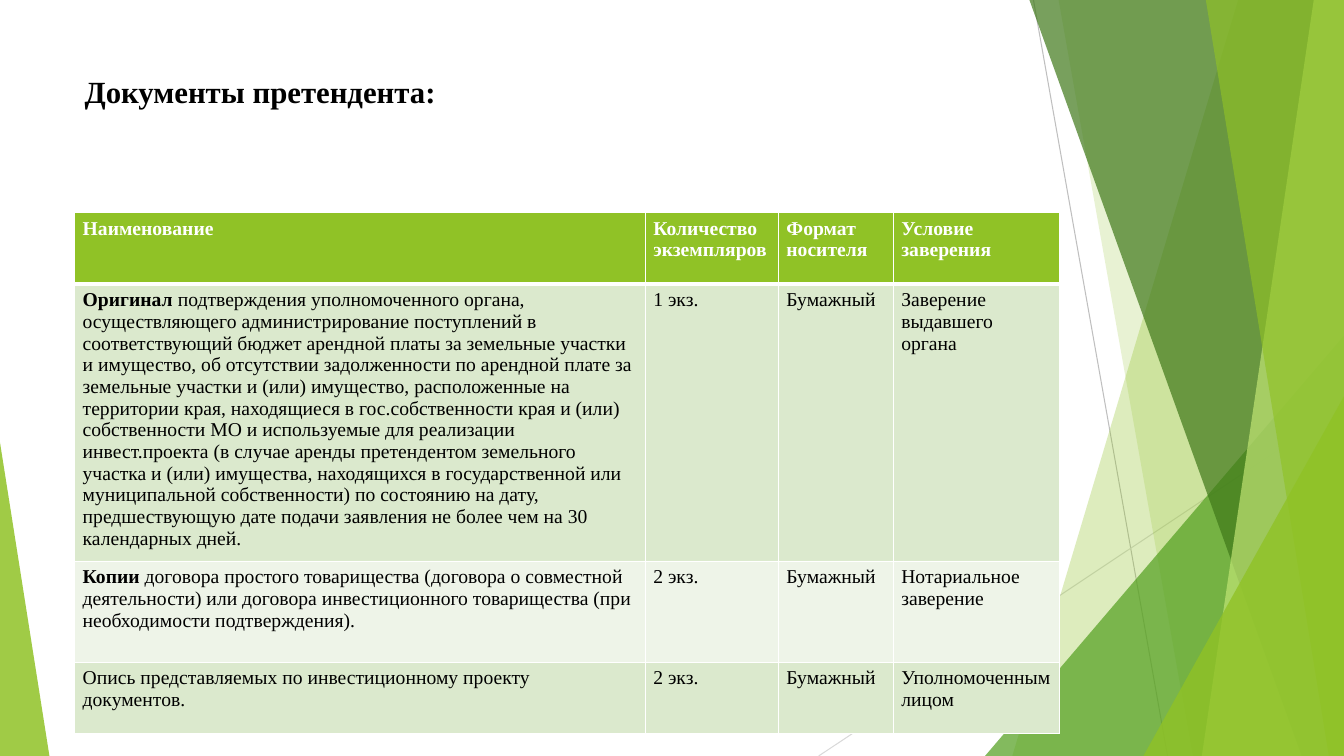
from lxml import etree
from pptx import Presentation
from pptx import util as u
from pptx.dml.color import RGBColor
from pptx.enum import shapes, text
from pptx.oxml import ns

WHITE = RGBColor(0xFF, 0xFF, 0xFF)
BLACK = RGBColor(0, 0, 0)
LIME = RGBColor(0x90, 0xC2, 0x26)
PALE_LIME = RGBColor(0xC0, 0xE4, 0x74)
GREEN = RGBColor(0x54, 0xA0, 0x21)
DARK_GREEN = RGBColor(0x3F, 0x78, 0x19)
GREY = RGBColor(0xBF, 0xBF, 0xBF)
LIGHT_GREY = RGBColor(0xD9, 0xD9, 0xD9)
BAND_DARK = RGBColor(0xDB, 0xE9, 0xCD)
BAND_LIGHT = RGBColor(0xEE, 0xF4, 0xE8)
FONT = "Times New Roman"
WIDTH, HEIGHT = 13.33, 7.5

COLUMNS = [5.66, 1.32, 1.14, 1.65]
ROWS = [0.71, 2.75, 1, 0.71]
HEADER = ["Наименование", "Количество экземпляров", "Формат носителя", "Условие заверения"]
# Each row: bold lead, rest of the name, copies, medium, certification
DOCUMENTS = [
    ("Оригинал",
     " подтверждения уполномоченного органа, осуществляющего администрирование "
     "поступлений в соответствующий бюджет арендной платы за земельные участки и "
     "имущество, об отсутствии задолженности по арендной плате за земельные участки "
     "и (или) имущество, расположенные на территории края, находящиеся в "
     "гос.собственности края и (или) собственности МО и используемые для реализации "
     "инвест.проекта (в случае аренды претендентом земельного участка и (или) "
     "имущества, находящихся в государственной или муниципальной собственности) по "
     "состоянию на дату, предшествующую дате подачи заявления не более чем на 30 "
     "календарных дней.",
     "1 экз.", "Бумажный", "Заверение выдавшего органа"),
    ("Копии ",
     "договора простого товарищества (договора о совместной деятельности) или договора "
     "инвестиционного товарищества (при необходимости подтверждения).",
     "2 экз.", "Бумажный", "Нотариальное заверение"),
    ("", "Опись представляемых по инвестиционному проекту документов.",
     "2 экз.", "Бумажный", "Уполномоченным лицом"),
]


def add_span(para, words, size, color, bold):
    span = para.add_run()
    span.text = words
    span.font.name = FONT
    span.font.size = u.Pt(size)
    span.font.bold = bold
    span.font.color.rgb = color


def paint(shape, color, opacity):
    shape.shadow.inherit = False
    shape.fill.solid()
    shape.fill.fore_color.rgb = color
    shape.line.fill.background()
    tone = shape.fill._xPr.find(".//" + ns.qn("a:srgbClr"))
    etree.SubElement(tone, ns.qn("a:alpha")).set("val", str(opacity * 1000))


def add_thin_line(page, start, end, color):
    line = page.shapes.add_connector(
        shapes.MSO_CONNECTOR.STRAIGHT, *map(u.Inches, start + end))
    line.line.color.rgb = color
    line.line.width = u.Pt(0.75)
    etree.SubElement(line._element.spPr, ns.qn("a:effectLst"))


def add_band(page, top_x, bottom_x, color, opacity):
    """Full-height panel with a slanted left edge, up to the right slide edge."""
    outline = page.shapes.build_freeform(u.Inches(top_x), 0)
    corners = [(WIDTH, 0), (WIDTH, HEIGHT), (bottom_x, HEIGHT)]
    outline.add_line_segments([(u.Inches(x), u.Inches(y)) for x, y in corners], close=True)
    paint(outline.convert_to_shape(), color, opacity)


def add_corner(page, left, top, width, apex, color, opacity):
    """Triangle standing on the bottom edge of the slide."""
    corner = page.shapes.add_shape(
        shapes.MSO_SHAPE.ISOSCELES_TRIANGLE,
        *map(u.Inches, (left, top, width, HEIGHT - top)))
    corner.adjustments[0] = apex
    paint(corner, color, opacity)


def add_decoration(page):
    add_thin_line(page, (10.25, 0), (11.58, HEIGHT), GREY)
    add_thin_line(page, (WIDTH, 4.03), (8.12, HEIGHT), LIGHT_GREY)
    add_band(page, 12.28, 10.04, LIME, 30)
    add_band(page, 10.5, 11.83, LIME, 20)
    add_corner(page, 9.77, 3.33, 3.56, 1, GREEN, 72)
    add_band(page, 10.21, 12.91, DARK_GREEN, 70)
    add_band(page, 13.03, 11.92, PALE_LIME, 70)
    add_band(page, 11.96, 13.18, LIME, 65)
    add_corner(page, 11.34, 3.93, 1.99, 1, LIME, 80)
    add_corner(page, 0, 4.39, 0.49, 0, LIME, 85)


def add_title(page, left, top, width, height):
    title = page.shapes.title
    title.left, title.top, title.width, title.height = map(
        u.Inches, (left, top, width, height))
    page.shapes._spTree.append(title._element)  # in front of the decoration
    frame = title.text_frame
    frame.word_wrap = True
    frame.vertical_anchor = text.MSO_ANCHOR.TOP
    para = frame.paragraphs[0]
    para.alignment = text.PP_ALIGN.LEFT
    add_span(para, "Документы претендента:", 22, BLACK, True)


def set_borders(cell, widths):
    props = cell._tc.get_or_add_tcPr()
    for index, (side, points) in enumerate(widths.items()):
        border = etree.Element(ns.qn("a:ln" + side), w=str(u.Pt(points)))
        fill = etree.SubElement(border, ns.qn("a:solidFill"))
        etree.SubElement(fill, ns.qn("a:srgbClr")).set("val", str(WHITE))
        props.insert(index, border)


def fill_cell(cell, spans, fill, color, borders):
    cell.margin_left = cell.margin_right = u.Inches(0.08)
    cell.margin_top = cell.margin_bottom = u.Inches(0.05)
    cell.fill.solid()
    cell.fill.fore_color.rgb = fill
    set_borders(cell, borders)
    for words, bold in spans:
        if words:
            add_span(cell.text_frame.paragraphs[0], words, 14, color, bold)


def add_documents_table(page, left, top):
    frame = page.shapes.add_table(
        len(ROWS), len(COLUMNS),
        *map(u.Inches, (left, top, sum(COLUMNS), sum(ROWS))))
    table = frame.table
    for column, width in zip(table.columns, COLUMNS):
        column.width = u.Inches(width)
    for row, height in zip(table.rows, ROWS):
        row.height = u.Inches(height)

    # Header
    for cell, words in zip(table.rows[0].cells, HEADER):
        fill_cell(cell, [(words, True)], LIME, WHITE, {"L": 1, "R": 1, "T": 1, "B": 3})

    # Banded body
    for index, (lead, rest, *details) in enumerate(DOCUMENTS):
        fill = BAND_LIGHT if index % 2 else BAND_DARK
        borders = {"L": 1, "R": 1, "T": 1 if index else 3, "B": 1}
        contents = [[(lead, True), (rest, False)]] + [[(words, False)] for words in details]
        for cell, spans in zip(table.rows[index + 1].cells, contents):
            fill_cell(cell, spans, fill, BLACK, borders)


def main():
    deck = Presentation()
    deck.slide_width, deck.slide_height = u.Inches(WIDTH), u.Inches(HEIGHT)
    page = deck.slides.add_slide(deck.slide_layouts[5])
    page.background.fill.solid()
    page.background.fill.fore_color.rgb = WHITE
    add_decoration(page)
    add_title(page, 0.74, 0.67, 9.4, 1.44)
    add_documents_table(page, 0.74, 2.11)
    deck.save("out.pptx")


if __name__ == "__main__":
    main()
